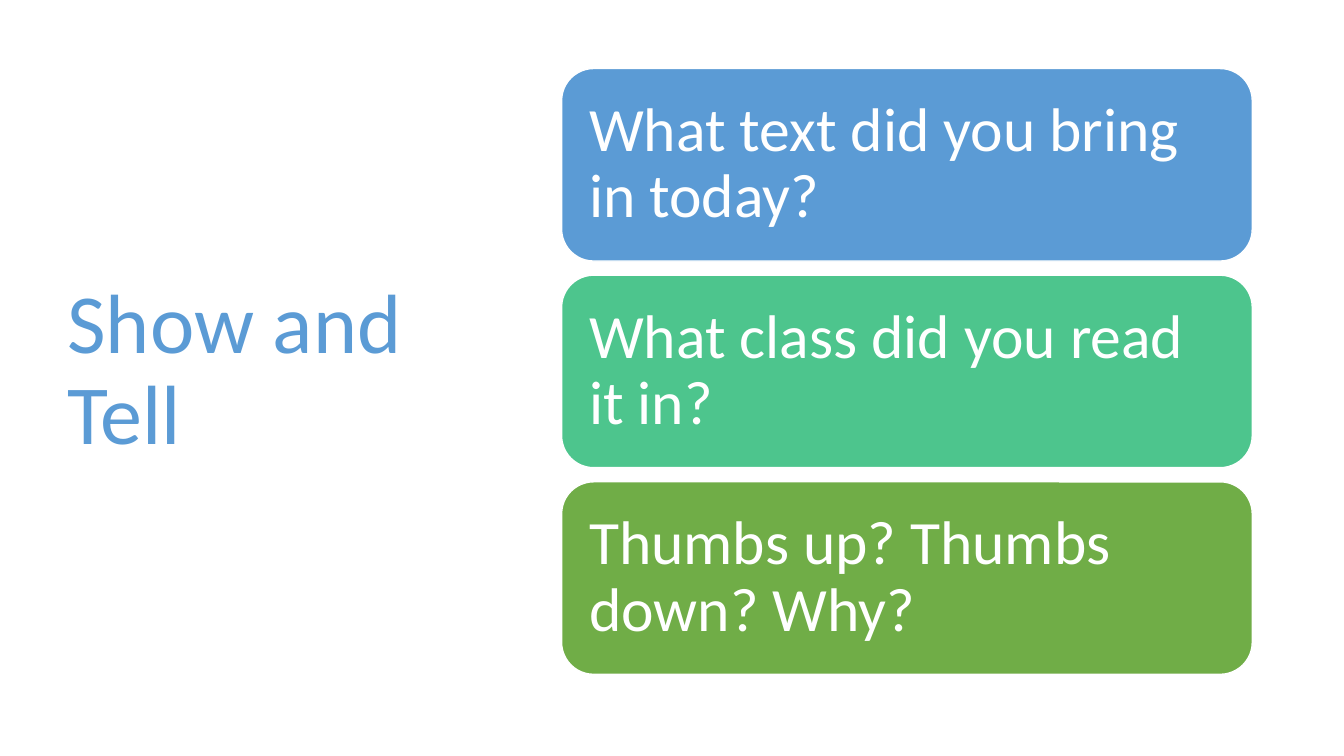
from pptx import Presentation
from pptx.dml.color import RGBColor
from pptx.enum import shapes, text

PX = 9144
WHITE = "FFFFFF"
BLUE = "5B9BD5"
QUESTIONS = [
    ("What text did you bring in today?", BLUE),
    ("What class did you read it in?", "4DC58D"),
    ("Thumbs up? Thumbs down? Why?", "70AD47"),
]


def px(*lengths):
    return [length * PX for length in lengths]


def color(hex_value):
    return RGBColor.from_string(hex_value)


def set_all(target, values):
    for name, value in values.items():
        setattr(target, name, value)


def write(frame, wording, size, hex_value, inset_x, inset_y):
    side, edge = px(inset_x, inset_y)
    set_all(frame, {
        "word_wrap": True,
        "vertical_anchor": text.MSO_ANCHOR.MIDDLE,
        "margin_left": side, "margin_right": side,
        "margin_top": edge, "margin_bottom": edge,
    })
    paragraph = frame.paragraphs[0]
    set_all(paragraph, {"alignment": text.PP_ALIGN.LEFT, "line_spacing": 0.9})
    run = paragraph.add_run()
    run.text = wording
    set_all(run.font, {"name": "Calibri", "size": size * 12700})
    run.font.color.rgb = color(hex_value)


def add_title(slide, left, top, width, height):
    title = slide.shapes.add_textbox(*px(left, top, width, height))
    write(title.text_frame, "Show and Tell", 60, BLUE, 10, 5)


def add_questions(slide, left, top, width, height, gap=14):
    card_height = (height - gap * (len(QUESTIONS) - 1)) // len(QUESTIONS)
    for index, (wording, fill) in enumerate(QUESTIONS):
        card_top = top + index * (card_height + gap)
        card = slide.shapes.add_shape(
            shapes.MSO_SHAPE.ROUNDED_RECTANGLE,
            *px(left, card_top, width, card_height))
        card.shadow.inherit = False
        card.fill.solid()
        card.fill.fore_color.rgb = color(fill)
        card.line.color.rgb = color(WHITE)
        card.line.width = 12700
        write(card.text_frame, wording, 44, WHITE, 18, 18)


def main():
    deck = Presentation()
    deck.slide_width, deck.slide_height = px(1333, 750)
    slide = deck.slides.add_slide(deck.slide_layouts[6])
    add_title(slide, 57, 68, 416, 602)
    add_questions(slide, 557, 68, 685, 601)
    deck.save("out.pptx")


if __name__ == "__main__":
    main()
